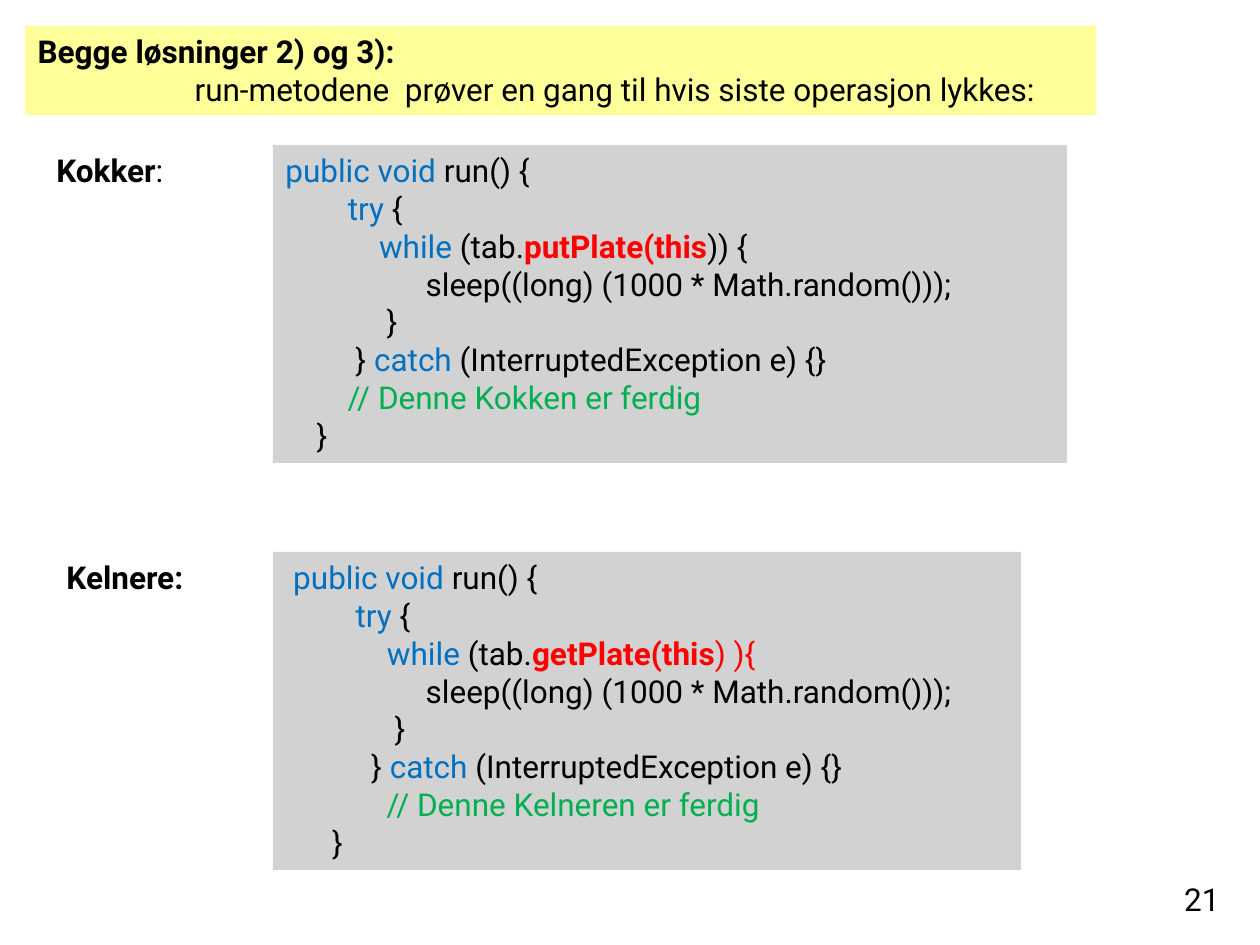
import pptx
import pptx.dml.color
import pptx.enum.shapes
import pptx.enum.text
import pptx.util

BLACK = pptx.dml.color.RGBColor(0x00, 0x00, 0x00)
BLUE = pptx.dml.color.RGBColor(0x00, 0x70, 0xC0)
RED = pptx.dml.color.RGBColor(0xFF, 0x00, 0x00)
GREEN = pptx.dml.color.RGBColor(0x00, 0xB0, 0x50)
GREY = pptx.dml.color.RGBColor(0xD2, 0xD2, 0xD2)
YELLOW = pptx.dml.color.RGBColor(0xFF, 0xFF, 0x99)

PLAIN, BOLD = (BLACK, False), (BLACK, True)
KEYWORD, CALL, PAREN, COMMENT = (BLUE, False), (RED, True), (RED, False), (GREEN, False)

ALIGN = pptx.enum.text.PP_ALIGN
ANCHOR = pptx.enum.text.MSO_ANCHOR


def px(length):
    return pptx.util.Emu(round(length * 914400 / 126))


class SlideBuilder:
    """Holds the text style and the current slide, and adds its elements."""

    font_name = "Roboto"
    font_size = pptx.util.Pt(18)

    def __init__(self, slide):
        self.slide = slide

    def fill_text(self, frame, lines, align=ALIGN.LEFT, anchor=ANCHOR.TOP):
        frame.word_wrap = True
        frame.auto_size = pptx.enum.text.MSO_AUTO_SIZE.NONE
        frame.vertical_anchor = anchor
        for index, line in enumerate(lines):
            paragraph = frame.add_paragraph() if index else frame.paragraphs[0]
            paragraph.alignment = align
            for text, (color, bold) in line:
                run = paragraph.add_run()
                run.text = text
                run.font.name = self.font_name
                run.font.size = self.font_size
                run.font.color.rgb = color
                run.font.bold = bold

    def heading(self, box, lines, indent):
        title = self.slide.shapes.title
        title.left, title.top, title.width, title.height = map(px, box)
        title.fill.solid()
        title.fill.fore_color.rgb = YELLOW
        self.fill_text(title.text_frame, lines)
        for paragraph in title.text_frame.paragraphs[1:]:
            paragraph._p.get_or_add_pPr().set("marL", str(px(indent)))

    def label(self, box, line, **layout):
        text_box = self.slide.shapes.add_textbox(*map(px, box))
        self.fill_text(text_box.text_frame, [line], **layout)

    def code(self, box, lines):
        panel = self.slide.shapes.add_shape(
            pptx.enum.shapes.MSO_SHAPE.RECTANGLE, *map(px, box))
        panel.shadow.inherit = False
        panel.fill.solid()
        panel.fill.fore_color.rgb = GREY
        panel.line.fill.background()
        self.fill_text(panel.text_frame, lines)


SLEEP = [("                  sleep((long) (1000 * Math.random()));", PLAIN)]
CATCH = [("catch", KEYWORD), (" (InterruptedException e) {}", PLAIN)]

COOK_CODE = [
    [("public void ", KEYWORD), ("run() {", PLAIN)],
    [("        ", PLAIN), ("try", KEYWORD), (" {", PLAIN)],
    [("            ", PLAIN), ("while", KEYWORD), (" (tab.", PLAIN),
     ("putPlate(this", CALL), (")) {", PLAIN)],
    SLEEP,
    [("             }", PLAIN)],
    [("         } ", PLAIN)] + CATCH,
    [("        // Denne Kokken er ferdig", COMMENT)],
    [("    }", PLAIN)],
]
WAITER_CODE = [
    [(" ", PLAIN), ("public void ", KEYWORD), ("run() {", PLAIN)],
    [("         ", PLAIN), ("try", KEYWORD), (" {", PLAIN)],
    [("             ", PLAIN), ("while", KEYWORD), (" (tab.", PLAIN),
     ("getPlate(this", CALL), (") ){", PAREN)],
    SLEEP,
    [("              }", PLAIN)],
    [("           } ", PLAIN)] + CATCH,
    [("             // Denne Kelneren er ferdig", COMMENT)],
    [("      }", PLAIN)],
]


def main():
    deck = pptx.Presentation()
    deck.slide_width, deck.slide_height = px(1260), px(945)
    builder = SlideBuilder(deck.slides.add_slide(deck.slide_layouts[5]))

    builder.heading((25, 26, 1071, 89), [
        [("Begge løsninger 2) og 3):", BOLD)],
        [("run-metodene  prøver en gang til hvis siste operasjon lykkes:", PLAIN)],
    ], indent=157)
    builder.label((44, 145, 150, 51), [("Kokker", BOLD), (":", PLAIN)])
    builder.code((273, 145, 794, 318), COOK_CODE)
    builder.label((54, 552, 160, 51), [("Kelnere:", BOLD)])
    builder.code((273, 552, 748, 318), WAITER_CODE)
    builder.label((970, 861, 262, 63), [("21", PLAIN)],
                  align=ALIGN.RIGHT, anchor=ANCHOR.BOTTOM)

    deck.save("out.pptx")


if __name__ == "__main__":
    main()
